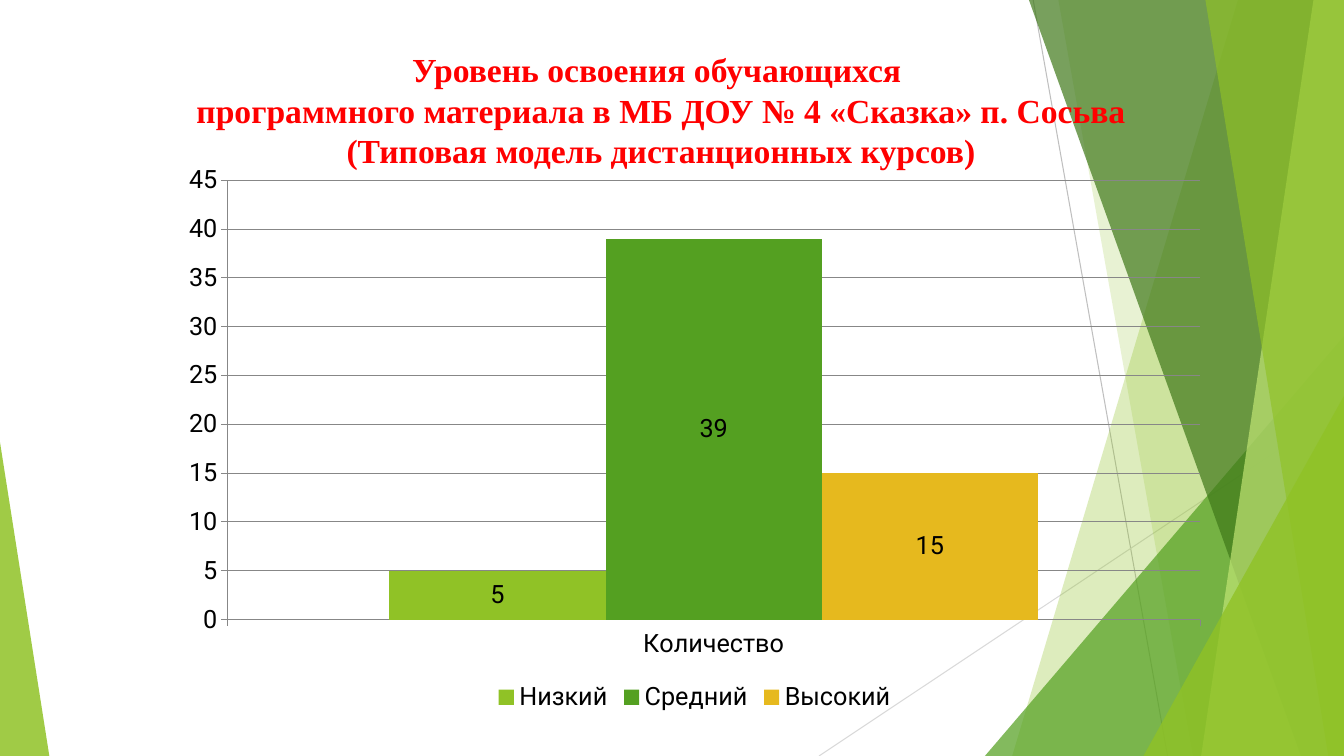
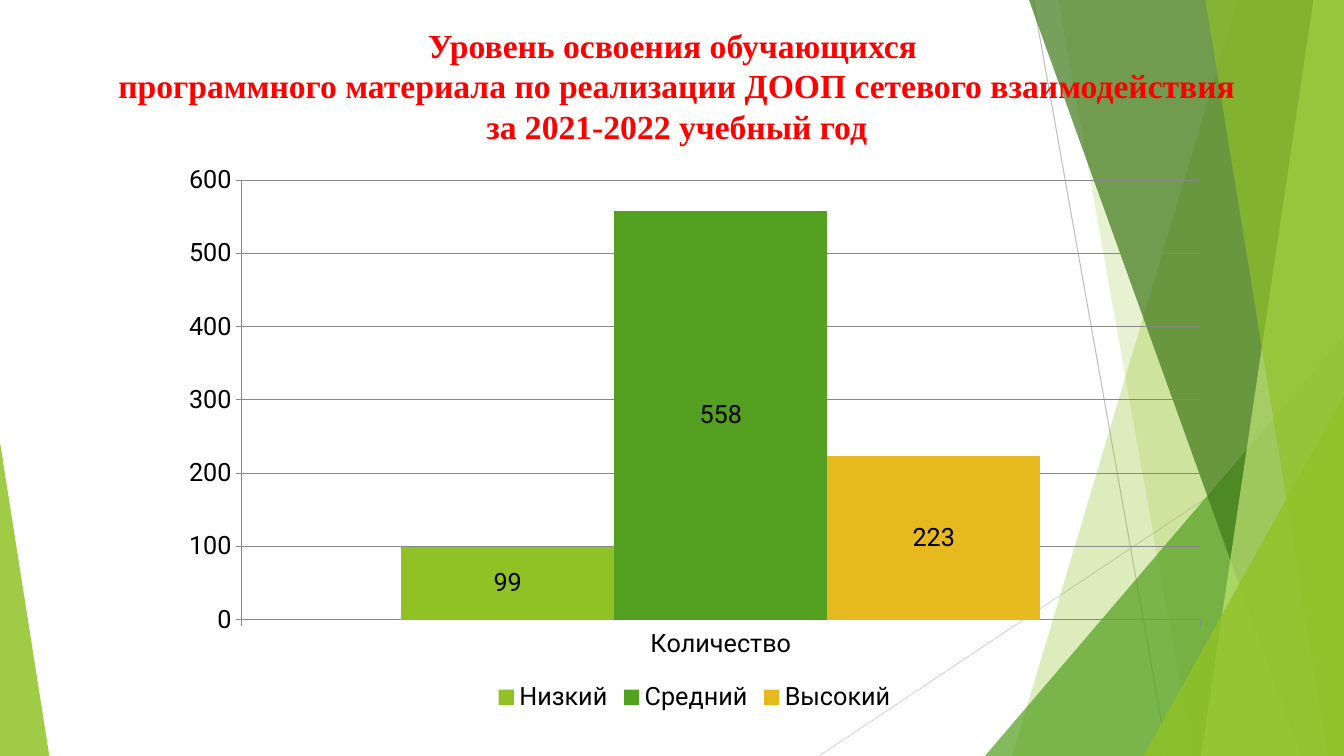
from lxml.etree import SubElement
from pptx import Presentation
from pptx.chart.data import CategoryChartData as ChartData
from pptx.dml.color import RGBColor as RGB
from pptx.enum.chart import XL_CHART_TYPE as Kind
from pptx.enum.chart import XL_LABEL_POSITION as LabelPos
from pptx.enum.chart import XL_LEGEND_POSITION as LegendPos
from pptx.enum.chart import XL_TICK_MARK as Tick
from pptx.enum.shapes import MSO_CONNECTOR as Line
from pptx.enum.shapes import MSO_SHAPE as Shape
from pptx.enum.text import MSO_ANCHOR as Anchor
from pptx.enum.text import MSO_AUTO_SIZE as Auto
from pptx.enum.text import PP_ALIGN as Align
from pptx.oxml.ns import qn
from pptx.util import Pt

PX = 9525
WIDTH, HEIGHT = 1280, 720
COLORS = {
    "lime": "90C226", "green": "54A021", "dark": "3F7819", "pale": "C0E474",
    "gold": "E6B91E", "red": "FF0000", "black": "000000", "axis": "878787",
    "gray": "BFBFBF", "light": "D9D9D9",
}
LEVELS = (("Низкий", "lime"), ("Средний", "green"), ("Высокий", "gold"))
CHART_BOX = (160, 147, 1003, 536)

RAYS = (("gray", (984, 0, 1112, 720)), ("light", (1280, 387, 780, 720)))
# Each band runs from its top and bottom x to the right edge of the slide.
BACK_BANDS = (("lime", 30, 1179, 964), ("lime", 20, 1008, 1136))
FRONT_BANDS = (("dark", 70, 980, 1239), ("pale", 70, 1251, 1144),
               ("lime", 65, 1148, 1265))

SLIDES = (
    ((29, 42, 1201, 126),
     ("Уровень освоения обучающихся ",
      "программного материала в МБ ДОУ № 4 «Сказка» п. Сосьва",
      " (Типовая модель дистанционных курсов) "),
     (5, 39, 15), 45, 5),
    ((93, 19, 1103, 126),
     ("Уровень освоения обучающихся ",
      "программного материала по реализации ДООП сетевого взаимодействия",
      " за 2021-2022 учебный год "),
     (99, 558, 223), 600, 100),
)


def color(name):
    return RGB.from_string(COLORS[name])


def scale(box):
    return [PX * side for side in box]


def paint(shape, name, alpha):
    """Give a shape a clear fill, with alpha in percent, and no outline."""
    shape.shadow.inherit = False
    shape.fill.solid()
    shape.fill.fore_color.rgb = color(name)
    shape.line.fill.background()
    tone = shape.element.spPr.find(qn("a:solidFill")).find(qn("a:srgbClr"))
    SubElement(tone, qn("a:alpha")).set("val", str(alpha * 1000))


def add_ray(shapes, name, ends):
    ray = shapes.add_connector(Line.STRAIGHT, *scale(ends))
    ray.line.color.rgb = color(name)
    ray.line.width = Pt(0.75)
    SubElement(ray.element.spPr, qn("a:effectLst"))


def add_band(shapes, name, alpha, top, bottom):
    form = shapes.build_freeform(top, 0, scale=PX)
    form.add_line_segments([(WIDTH, 0), (WIDTH, HEIGHT), (bottom, HEIGHT)])
    paint(form.convert_to_shape(), name, alpha)


def add_wedge(shapes, name, alpha, box, peak):
    wedge = shapes.add_shape(Shape.ISOSCELES_TRIANGLE, *scale(box))
    wedge.adjustments[0] = peak
    paint(wedge, name, alpha)


def add_decor(slide, layout):
    """Draw the green facets as a group and hand it to the shared layout."""
    group = slide.shapes.add_group_shape()
    shapes = group.shapes
    for ray in RAYS:
        add_ray(shapes, *ray)
    for band in BACK_BANDS:
        add_band(shapes, *band)
    add_wedge(shapes, "green", 72, (938, 320, 342, 400), 1)
    for band in FRONT_BANDS:
        add_band(shapes, *band)
    add_wedge(shapes, "lime", 80, (1089, 377, 191, 343), 1)
    add_wedge(shapes, "lime", 85, (0, 421, 47, 299), 0)
    for num, node in enumerate(group.element.iter(qn("p:cNvPr")), 100):
        node.set("id", str(num))
    layout.shapes.element.append(group.element)


def set_title(slide, box, lines):
    title = slide.shapes.title
    title.left, title.top, title.width, title.height = scale(box)
    frame = title.text_frame
    frame.word_wrap = True
    frame.auto_size = Auto.SHAPE_TO_FIT_TEXT
    frame.vertical_anchor = Anchor.TOP
    for num, line in enumerate(lines):
        para = frame.add_paragraph() if num else frame.paragraphs[0]
        para.alignment = Align.CENTER
        run = para.add_run()
        run.text = line
        font = run.font
        font.name, font.size, font.bold = "Times New Roman", Pt(24), True
        font.color.rgb = color("red")


def set_axis(axis):
    axis.major_tick_mark = Tick.OUTSIDE
    axis.minor_tick_mark = Tick.NONE
    axis.format.line.color.rgb = color("axis")
    axis.format.line.width = Pt(0.75)


def add_levels(slide, values, top, step):
    """Add the column chart of the three levels."""
    data = ChartData()
    data.categories = ["Количество"]
    for (name, _), value in zip(LEVELS, values):
        data.add_series(name, [value])
    chart = slide.shapes.add_chart(
        Kind.COLUMN_CLUSTERED, *scale(CHART_BOX), data).chart
    chart.has_title = False
    chart.font.name, chart.font.size = "Roboto", Pt(18)
    chart.font.color.rgb = color("black")
    chart.has_legend = True
    chart.legend.position = LegendPos.BOTTOM
    chart.legend.include_in_layout = False

    set_axis(chart.category_axis)
    axis = chart.value_axis
    set_axis(axis)
    axis.minimum_scale, axis.maximum_scale, axis.major_unit = 0, top, step
    axis.has_major_gridlines = True
    grid = axis.major_gridlines.format.line
    grid.color.rgb = color("axis")
    grid.width = Pt(0.75)

    plot = chart.plots[0]
    plot.gap_width, plot.overlap = 150, 0
    plot.vary_by_categories = False
    for series, (_, tone) in zip(plot.series, LEVELS):
        series.format.fill.solid()
        series.format.fill.fore_color.rgb = color(tone)
        labels = series.data_labels
        labels.show_value = True
        labels.position = LabelPos.CENTER


def main():
    deck = Presentation()
    deck.slide_width, deck.slide_height = scale((WIDTH, HEIGHT))
    layout = deck.slide_layouts.get_by_name("Title Only")
    for num, (box, lines, values, top, step) in enumerate(SLIDES):
        slide = deck.slides.add_slide(layout)
        if num == 0:
            add_decor(slide, layout)
        set_title(slide, box, lines)
        add_levels(slide, values, top, step)
    deck.save("out.pptx")


if __name__ == "__main__":
    main()
